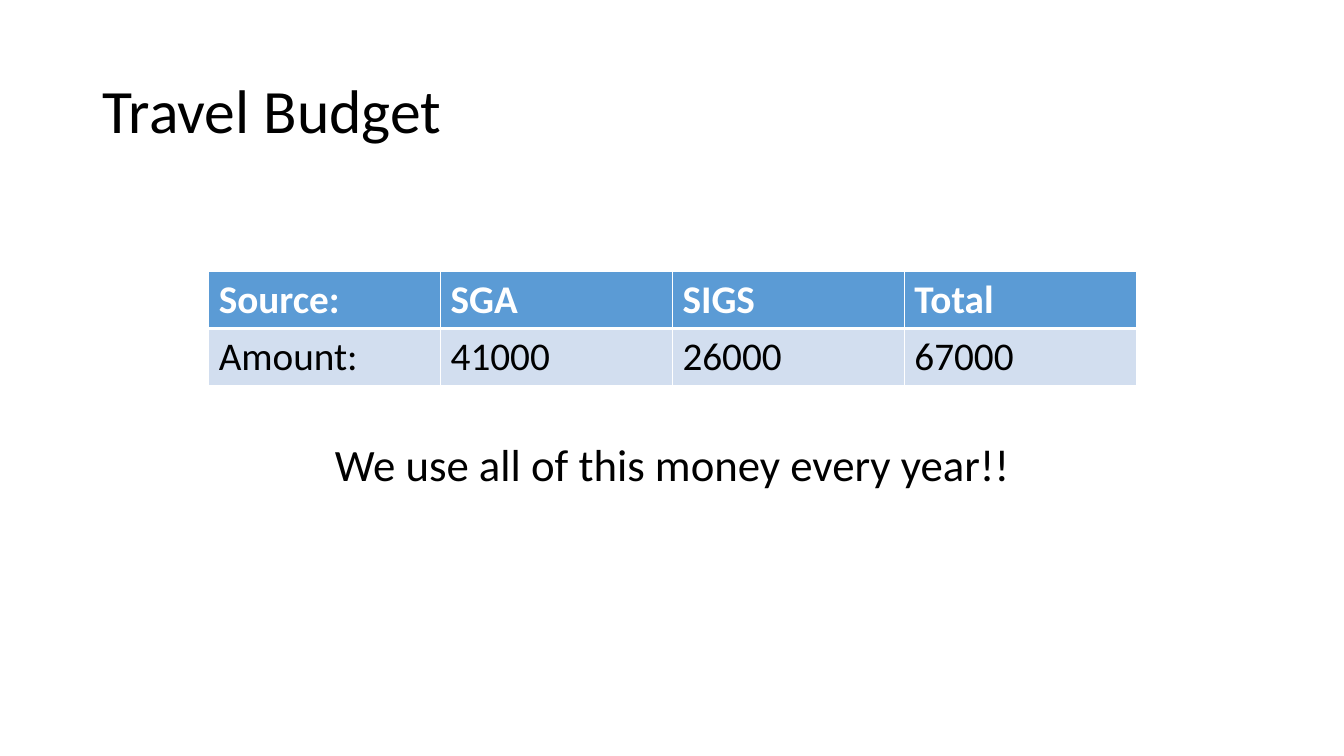
import lxml.etree
import pptx
import pptx.dml.color
import pptx.enum.text
import pptx.oxml.ns
import pptx.util

PX = 9144  # 100 px to the inch
BLACK = pptx.dml.color.RGBColor(0x00, 0x00, 0x00)
WHITE = pptx.dml.color.RGBColor(0xFF, 0xFF, 0xFF)
BLUE = pptx.dml.color.RGBColor(0x5B, 0x9B, 0xD5)
PALE = pptx.dml.color.RGBColor(0xD2, 0xDE, 0xEF)
ALIGN = pptx.enum.text.PP_ALIGN
ANCHOR = pptx.enum.text.MSO_ANCHOR


def write(frame, text, font="Calibri", size=28, color=BLACK, bold=False,
          align=ALIGN.LEFT, space=1.0):
    para = frame.paragraphs[0]
    para.alignment = align
    para.line_spacing = space
    run = para.add_run()
    run.text = text
    run.font.name = font
    run.font.size = pptx.util.Pt(size)
    run.font.bold = bold
    run.font.color.rgb = color


def edge(cell, side, width, color=WHITE):
    qn = pptx.oxml.ns.qn
    props = cell._tc.get_or_add_tcPr()
    line = lxml.etree.SubElement(props, qn("a:ln" + side),
                                 w=str(pptx.util.Pt(width)))
    fill = lxml.etree.SubElement(line, qn("a:solidFill"))
    lxml.etree.SubElement(fill, qn("a:srgbClr"), val=str(color))


class Page:
    def __init__(self, deck, font="Calibri"):
        self.font = font
        self.slide = deck.slides.add_slide(deck.slide_layouts[6])

    def text(self, box, text, anchor=ANCHOR.TOP, **style):
        shape = self.slide.shapes.add_textbox(*(n * PX for n in box))
        frame = shape.text_frame
        frame.word_wrap = True
        frame.vertical_anchor = anchor
        write(frame, text, font=self.font, **style)

    def table(self, box, rows):
        shape = self.slide.shapes.add_table(
            len(rows), len(rows[0]), *(n * PX for n in box))
        grid = shape.table
        grid.horz_banding = False
        for r, row in enumerate(rows):
            head = r == 0
            for c, text in enumerate(row):
                cell = grid.cell(r, c)
                # Thick rule between the header and the body
                for side, width in (("L", 1), ("R", 1), ("T", 1 if head else 3),
                                    ("B", 3 if head else 1)):
                    edge(cell, side, width)
                cell.fill.solid()
                cell.fill.fore_color.rgb = BLUE if head else PALE
                write(cell.text_frame, text, font=self.font, bold=head,
                      color=WHITE if head else BLACK)


def main():
    deck = pptx.Presentation()
    deck.slide_width = 1333 * PX
    deck.slide_height = 750 * PX
    page = Page(deck)

    # Title
    page.text((92, 40, 1150, 145), "Travel Budget", anchor=ANCHOR.MIDDLE,
              size=44, space=0.9)

    # Budget by source
    page.table((207, 269, 920, 114), [
        ["Source:", "SGA", "SIGS", "Total"],
        ["Amount:", "41000", "26000", "67000"],
    ])

    # Closing remark
    page.text((289, 428, 756, 64), "We use all of this money every year!!",
              size=32, align=ALIGN.CENTER)

    deck.save("out.pptx")


if __name__ == "__main__":
    main()
